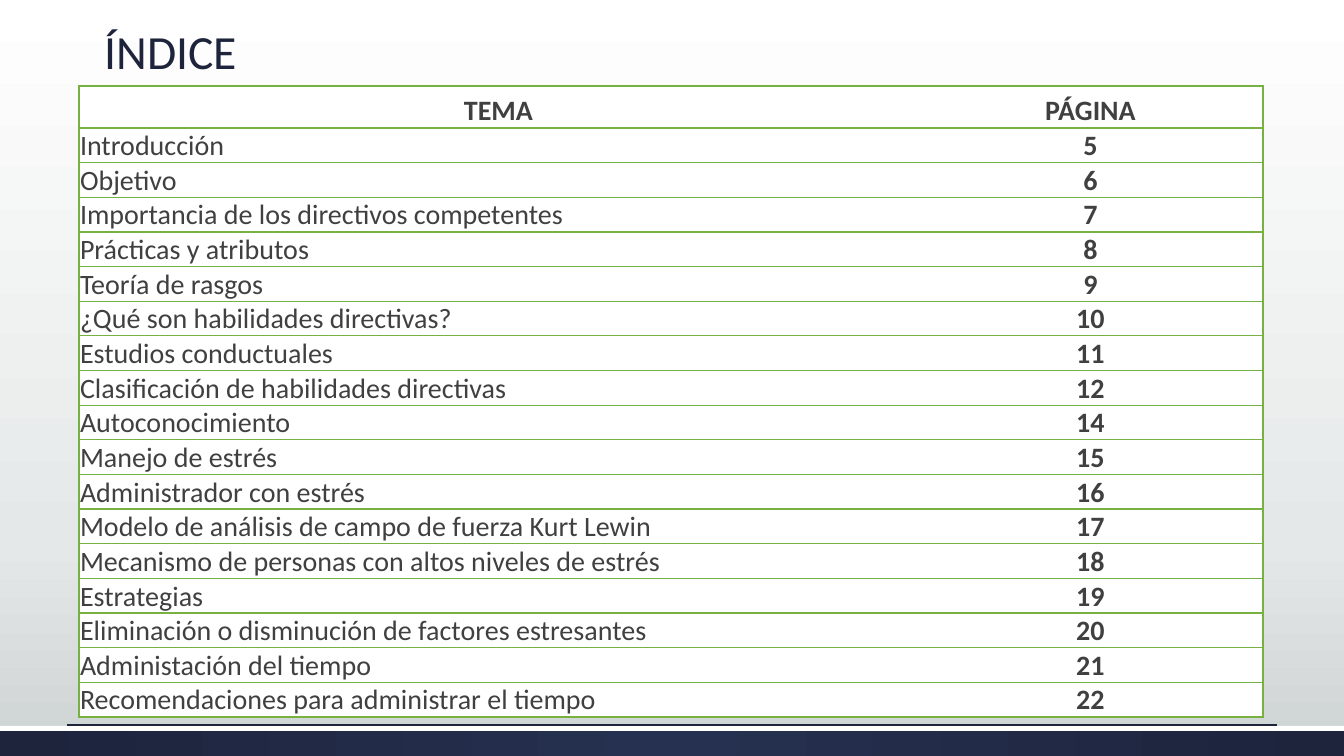
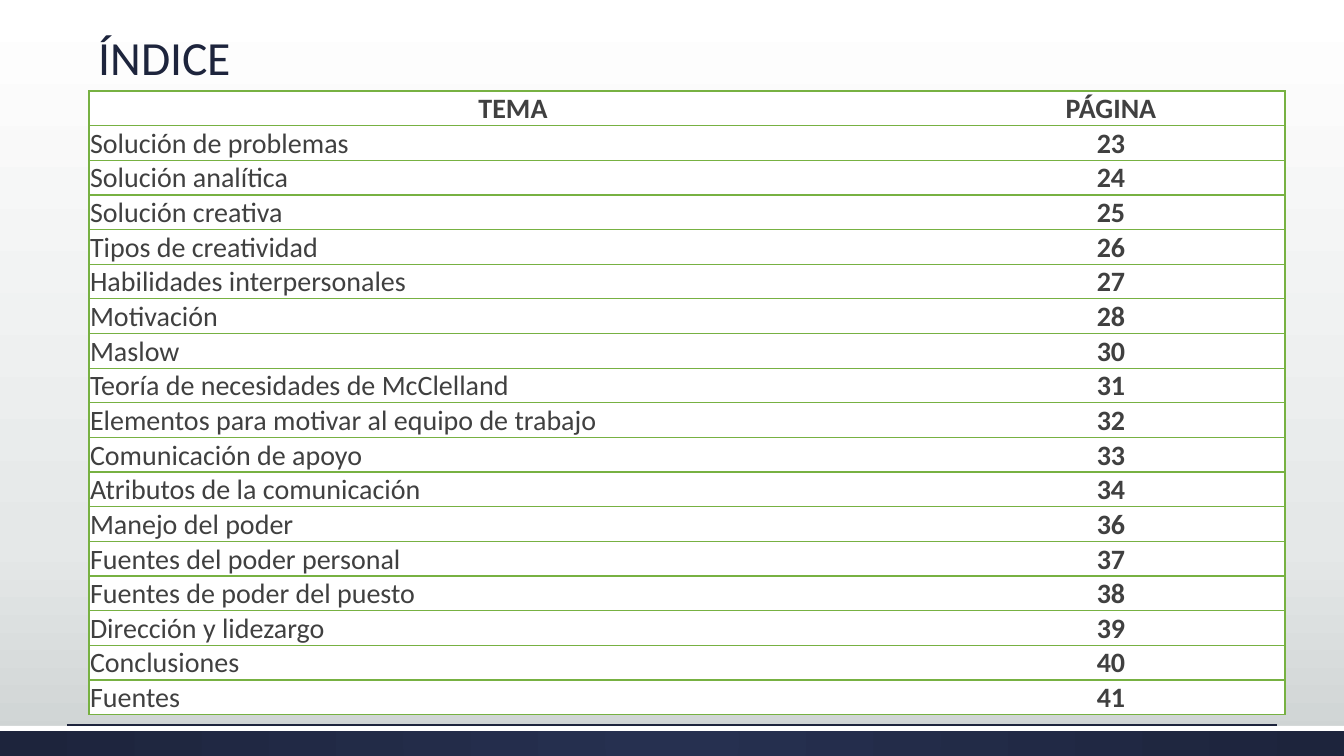
"""Builds the two index slides, each a title above a table of topics and pages."""
import lxml.etree
import pptx
import pptx.dml.color
import pptx.enum.shapes
import pptx.enum.text
import pptx.oxml.ns
import pptx.util
from dataclasses import dataclass

ANCHOR = pptx.enum.text.MSO_ANCHOR
ALIGN = pptx.enum.text.PP_ALIGN
qn = pptx.oxml.ns.qn


@dataclass(frozen=True)
class Theme:
    font: str = "Calibri"
    title_size: int = 34
    body_size: int = 20
    navy: str = "1D243C"
    body: str = "404040"
    white: str = "FFFFFF"
    border: str = "77B142"
    border_width: int = 1
    backdrop: tuple = ((0, "FFFFFF"), (72, "E5E8E8"), (100, "CDD2D2"))
    band: tuple = ((0, "263050"), (100, "1D243C"))
    plain_table: str = "{2D5ABB26-0587-4C30-8999-92F81FD0307C}"


THEME = Theme()
PX = 914400 / 100.8
WIDTH, HEIGHT = 1344, 756
BAND_HEIGHT, STRIPE_HEIGHT = 30, 5
RULE_INSET, RULE_Y = 67, 725
TITLE_SIZE = (1048, 73)
TITLE = "ÍNDICE"
HEADINGS = ("TEMA", "PÁGINA")

INDEXES = [
    {
        "title_at": (95, 12),
        "table_at": (79, 86),
        "columns": (839, 345),
        "heights": (42, 34),
        "topics": [
            ("Introducción", 5),
            ("Objetivo", 6),
            ("Importancia de los directivos competentes", 7),
            ("Prácticas y atributos", 8),
            ("Teoría de rasgos", 9),
            ("¿Qué son habilidades directivas?", 10),
            ("Estudios conductuales", 11),
            ("Clasificación de habilidades directivas", 12),
            ("Autoconocimiento", 14),
            ("Manejo de estrés", 15),
            ("Administrador con estrés", 16),
            ("Modelo de análisis de campo de fuerza Kurt Lewin", 17),
            ("Mecanismo de personas con altos niveles de estrés", 18),
            ("Estrategias", 19),
            ("Eliminación o disminución de factores estresantes", 20),
            ("Administación del tiempo", 21),
            ("Recomendaciones para administrar el tiempo", 22),
        ],
    },
    {
        "title_at": (89, 18),
        "table_at": (89, 91),
        "columns": (848, 348),
        "heights": (32, 32),
        "topics": [
            ("Solución de problemas", 23),
            ("Solución analítica", 24),
            ("Solución creativa", 25),
            ("Tipos de creatividad", 26),
            ("Habilidades interpersonales", 27),
            ("Motivación", 28),
            ("Maslow", 30),
            ("Teoría de necesidades de McClelland", 31),
            ("Elementos para motivar al equipo de trabajo", 32),
            ("Comunicación de apoyo", 33),
            ("Atributos de la comunicación", 34),
            ("Manejo del poder", 36),
            ("Fuentes del poder personal", 37),
            ("Fuentes de poder del puesto", 38),
            ("Dirección y lidezargo", 39),
            ("Conclusiones", 40),
            ("Fuentes", 41),
        ],
    },
]


def emu(*lengths):
    return [pptx.util.Emu(round(length * PX)) for length in lengths]


def rgb(color):
    return pptx.dml.color.RGBColor.from_string(color)


def child(parent, tag, **attributes):
    return lxml.etree.SubElement(parent, qn(tag), attributes)


def write(frame, text, size, color, bold=False, align=ALIGN.LEFT, spacing=None):
    paragraph = frame.paragraphs[0]
    paragraph.alignment = align
    paragraph.line_spacing = spacing
    run = paragraph.add_run()
    run.text = text
    run.font.name = THEME.font
    run.font.size = pptx.util.Pt(size)
    run.font.bold = bold
    run.font.color.rgb = rgb(color)


def blend(fill, owner, stops, radial=False):
    fill.gradient()
    gradient = owner.find(".//" + qn("a:gradFill"))
    for part in list(gradient):
        gradient.remove(part)
    stop_list = child(gradient, "a:gsLst")
    for percent, color in stops:
        stop = child(stop_list, "a:gs", pos=str(percent * 1000))
        child(stop, "a:srgbClr", val=color)
    if radial:
        circle = child(gradient, "a:path", path="circle")
        child(circle, "a:fillToRect", l="50000", t="50000", r="50000", b="50000")
    else:
        child(gradient, "a:lin", ang="5400000", scaled="0")


def add_bar(slide, height):
    bar = slide.shapes.add_shape(
        pptx.enum.shapes.MSO_SHAPE.RECTANGLE, *emu(0, HEIGHT - BAND_HEIGHT, WIDTH, height))
    bar.shadow.inherit = False
    bar.line.fill.background()
    return bar


def add_frame(slide):
    blend(slide.background.fill, slide.element, THEME.backdrop)
    band = add_bar(slide, BAND_HEIGHT)
    blend(band.fill, band.element, THEME.band, radial=True)
    stripe = add_bar(slide, STRIPE_HEIGHT)
    stripe.fill.solid()
    stripe.fill.fore_color.rgb = rgb(THEME.white)
    rule = slide.shapes.add_connector(
        pptx.enum.shapes.MSO_CONNECTOR.STRAIGHT,
        *emu(RULE_INSET, RULE_Y, WIDTH - RULE_INSET, RULE_Y))
    rule.line.color.rgb = rgb(THEME.navy)
    rule.line.width = pptx.util.Pt(THEME.border_width)
    child(rule.element.spPr, "a:effectLst")


def add_title(slide, position):
    title = slide.shapes.add_textbox(*emu(*position, *TITLE_SIZE)).text_frame
    title.word_wrap = True
    title.vertical_anchor = ANCHOR.BOTTOM
    write(title, TITLE, THEME.title_size, THEME.navy, spacing=0.9)


def style_cell(cell, outer_side):
    properties = cell._tc.get_or_add_tcPr()
    for side in (outer_side, "T", "B"):
        edge = child(properties, "a:ln" + side, w=str(pptx.util.Pt(THEME.border_width)))
        child(child(edge, "a:solidFill"), "a:srgbClr", val=THEME.border)
    cell.fill.solid()
    cell.fill.fore_color.rgb = rgb(THEME.white)
    cell.vertical_anchor = ANCHOR.BOTTOM
    cell.margin_left, cell.margin_top, cell.margin_right, cell.margin_bottom = emu(1, 1, 1, 0)


def add_index(slide, index):
    entries = [HEADINGS, *index["topics"]]
    header_height, topic_height = index["heights"]
    heights = [header_height] + [topic_height] * len(index["topics"])
    frame = slide.shapes.add_table(
        len(entries), len(HEADINGS),
        *emu(*index["table_at"], sum(index["columns"]), sum(heights)))
    table = frame.table
    table.first_row = table.horz_banding = False
    frame.element.find(".//" + qn("a:tableStyleId")).text = THEME.plain_table
    for column, width in zip(table.columns, emu(*index["columns"])):
        column.width = width
    for row, height in zip(table.rows, emu(*heights)):
        row.height = height
    for r, entry in enumerate(entries):
        for c, text in enumerate(entry):
            cell = table.cell(r, c)
            style_cell(cell, "LR"[c])
            is_topic = r > 0 and c == 0
            write(cell.text_frame, str(text), THEME.body_size, THEME.body,
                  bold=not is_topic, align=ALIGN.LEFT if is_topic else ALIGN.CENTER)


def main():
    deck = pptx.Presentation()
    deck.slide_width, deck.slide_height = emu(WIDTH, HEIGHT)
    for index in INDEXES:
        slide = deck.slides.add_slide(deck.slide_layouts[6])
        add_frame(slide)
        add_title(slide, index["title_at"])
        add_index(slide, index)
    deck.save("out.pptx")


if __name__ == "__main__":
    main()
